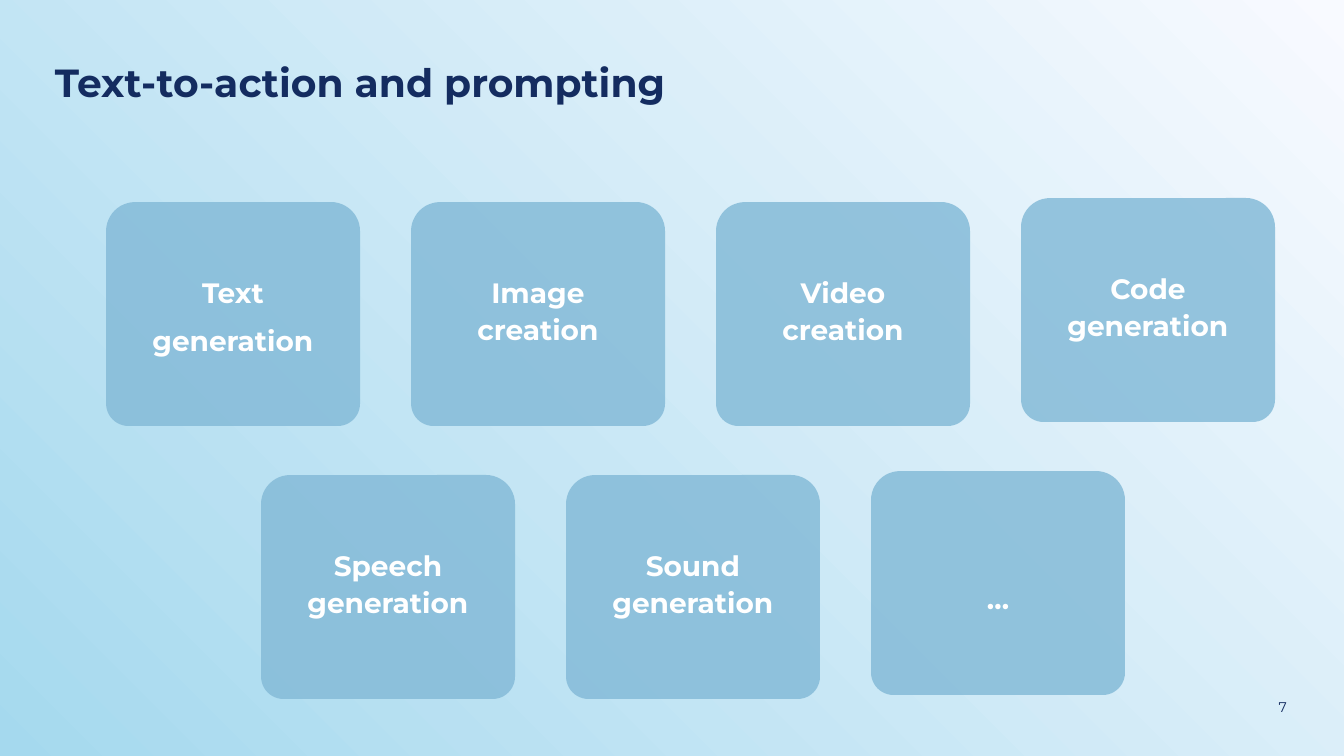
from dataclasses import dataclass

from lxml.etree import SubElement
from pptx import Presentation
from pptx.dml.color import RGBColor
from pptx.enum.shapes import MSO_SHAPE
from pptx.enum.text import MSO_ANCHOR, PP_ALIGN
from pptx.oxml.ns import qn
from pptx.util import Pt

SCALE = 914400 / 134.4


@dataclass(frozen=True)
class Theme:
    """Colours, font and type sizes of the deck."""
    navy: str = "142C60"
    white: str = "FFFFFF"
    card: str = "85BBD8"
    sky: str = "A5D9EE"
    mist: str = "F8FAFF"
    font: str = "Montserrat"
    title: float = 21
    label: float = 15
    number: float = 7.5


THEME = Theme()


def px(*values):
    """Turn px lengths into EMU."""
    return [round(value * SCALE) for value in values]


def write(slide, box, *lines, size, color, bold=False, align=PP_ALIGN.LEFT,
          anchor=MSO_ANCHOR.TOP, insets=(0, 0, 0, 0), spacing=None, gap=0):
    """Add a text box with one paragraph per line."""
    frame = slide.shapes.add_textbox(*px(*box)).text_frame
    frame.word_wrap = True
    frame.vertical_anchor = anchor
    (frame.margin_left, frame.margin_top,
     frame.margin_right, frame.margin_bottom) = px(*insets)
    for index, line in enumerate(lines):
        para = frame.add_paragraph() if index else frame.paragraphs[0]
        para.text = line
        para.alignment = align
        para.line_spacing = spacing
        if index:
            para.space_before = Pt(gap)
        for run in para.runs:
            run.font.name = THEME.font
            run.font.size = Pt(size)
            run.font.bold = bold
            run.font.color.rgb = RGBColor.from_string(color)


def paint(slide):
    """Fill the background with a diagonal gradient."""
    fill = slide.background.fill
    fill.gradient()
    fill.gradient_angle = 45
    for stop, color in zip(fill.gradient_stops, (THEME.sky, THEME.mist)):
        stop.color.rgb = RGBColor.from_string(color)


def add_card(slide, box, lines, drop=0):
    """Draw one translucent card with its label."""
    left, top, width, height = box
    card = slide.shapes.add_shape(MSO_SHAPE.ROUND_2_SAME_RECTANGLE, *px(*box))
    card.rotation = 180
    card.adjustments[0] = 0.10
    card.adjustments[1] = 0.13
    card.shadow.inherit = False
    card.line.fill.background()
    card.fill.solid()
    card.fill.fore_color.rgb = RGBColor.from_string(THEME.card)
    tint = card.element.spPr.find(".//" + qn("a:srgbClr"))
    SubElement(tint, qn("a:alpha"), val="85000")
    write(slide, (left, top + 70 + drop, width, 73), *lines, size=THEME.label,
          color=THEME.white, bold=True, align=PP_ALIGN.CENTER, spacing=1.1, gap=6)


def add_row(slide, box, labels, drop=0):
    """Lay out a row of cards whose last card sits a little higher."""
    left, top, width, height = box
    card, lift = 254, 4
    pitch = (width - card) / (len(labels) - 1)
    for index, lines in enumerate(labels):
        last = index == len(labels) - 1
        place = (left + index * pitch, top - lift * last, card, height)
        add_card(slide, place, lines, drop * last)


def build():
    """Build the slide and save it."""
    deck = Presentation()
    deck.slide_width, deck.slide_height = px(1344, 756)
    slide = deck.slides.add_slide(deck.slide_layouts[6])
    paint(slide)
    write(slide, (1200, 698, 87, 17), "7", size=THEME.number, color=THEME.navy,
          align=PP_ALIGN.RIGHT, anchor=MSO_ANCHOR.MIDDLE)
    write(slide, (55, 51, 742, 47), "Text-to-action and prompting",
          size=THEME.title, color=THEME.navy, bold=True, insets=(0, 7, 13, 7))
    add_row(slide, (106, 202, 1169, 224), [
        ["Text", "generation"], ["Image\vcreation"],
        ["Video\vcreation"], ["Code\vgeneration"]])
    add_row(slide, (261, 475, 864, 224), [
        ["Speech\vgeneration"], ["Sound\vgeneration"], ["…"]], drop=37)
    deck.save("out.pptx")


if __name__ == "__main__":
    build()
